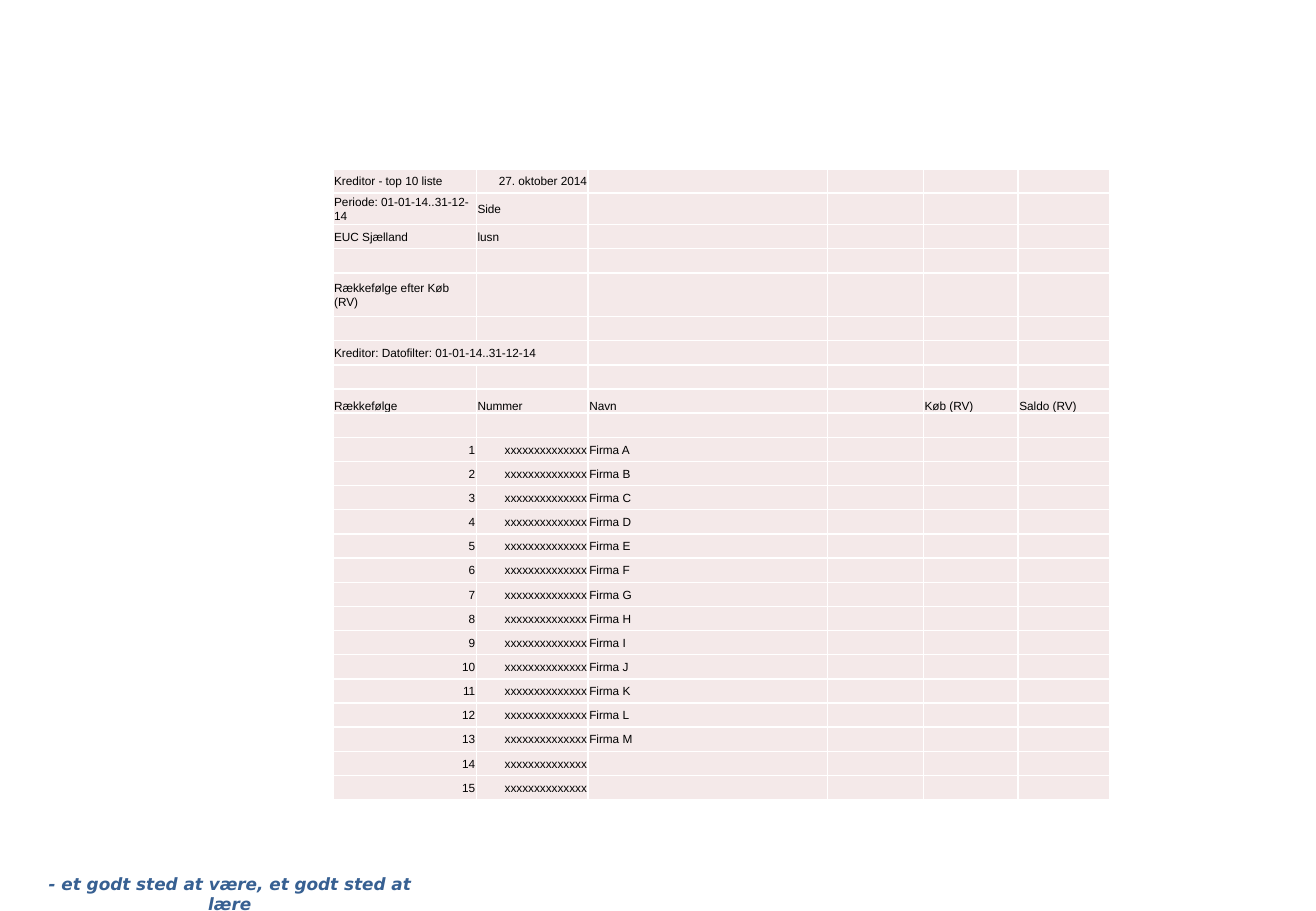
"""Build the creditor top 10 list slide."""
from lxml import etree
from pptx import Presentation
from pptx.dml.color import RGBColor
from pptx.enum.text import MSO_ANCHOR, PP_ALIGN
from pptx.oxml.ns import qn
from pptx.util import Inches, Pt

MIDDLE, BOTTOM = MSO_ANCHOR.MIDDLE, MSO_ANCHOR.BOTTOM
LEFT, CENTER, RIGHT = PP_ALIGN.LEFT, PP_ALIGN.CENTER, PP_ALIGN.RIGHT
BLANK_LAYOUT = 6
HEADING_ROW = 8
FIRST_RANK_ROW = 10
COLUMN_WIDTHS = [1.18, 0.92, 1.97, 0.79, 0.78, 0.75]
TABLE_HEIGHT = 5.2
TALL_ROWS = {1: 0.26, 4: 0.36}

COMPANIES = [f"Firma {letter}" for letter in "ABCDEFGHIJKLM"] + ["", ""]
ROWS = [
    ["Kreditor - top 10 liste", "27. oktober 2014"],
    ["Periode: 01-01-14..31-12-14", "Side"],
    ["EUC Sjælland", "lusn"],
    [],
    ["Rækkefølge efter Køb (RV)"],
    [],
    ["Kreditor: Datofilter: 01-01-14..31-12-14"],
    [],
    ["Rækkefølge", "Nummer", "Navn", "", "Køb (RV)", "Saldo (RV)"],
    [],
] + [[str(rank), "x" * 14, name] for rank, name in enumerate(COMPANIES, 1)]


def color(value):
    return RGBColor.from_string(value)


def add_span(para, text, size, font, fill):
    span = para.add_run()
    span.text = text
    span.font.size = Pt(size)
    span.font.name = font
    span.font.color.rgb = color(fill)
    return span


deck = Presentation()
deck.slide_width = Inches(10.83)
deck.slide_height = Inches(7.5)
page = deck.slides.add_slide(deck.slide_layouts[BLANK_LAYOUT])
page.background.fill.solid()
page.background.fill.fore_color.rgb = color("FFFFFF")

motto = page.shapes.add_textbox(Inches(0.1), Inches(7.13), Inches(3.58), Inches(0.28))
frame = motto.text_frame
frame.word_wrap = True
frame.margin_left = frame.margin_right = Inches(0.11)
frame.margin_top = frame.margin_bottom = Inches(0.06)
para = frame.paragraphs[0]
para.alignment = CENTER
span = add_span(para, "- et godt sted at være, et godt sted at lære", 10, "DejaVu Sans", "376092")
span.font.bold = True
span.font.italic = True

table = page.shapes.add_table(
    len(ROWS), len(COLUMN_WIDTHS), Inches(2.74), Inches(1.39),
    Inches(sum(COLUMN_WIDTHS)), Inches(TABLE_HEIGHT),
).table
table.first_row = False
table.horz_banding = False
for column, width in zip(table.columns, COLUMN_WIDTHS):
    column.width = Inches(width)

row_height = (TABLE_HEIGHT - sum(TALL_ROWS.values())) / (len(ROWS) - len(TALL_ROWS))
for row_index, texts in enumerate(ROWS):
    table.rows[row_index].height = Inches(TALL_ROWS.get(row_index, row_height))
    for column_index in range(len(COLUMN_WIDTHS)):
        cell = table.cell(row_index, column_index)
        cell.margin_left = cell.margin_right = cell.margin_top = Inches(0.01)
        cell.margin_bottom = 0
        cell.vertical_anchor = BOTTOM if row_index == HEADING_ROW else MIDDLE
        para = cell.text_frame.paragraphs[0]
        text = texts[column_index] if column_index < len(texts) else ""
        is_rank = row_index >= FIRST_RANK_ROW and column_index < 2
        is_date = (row_index, column_index) == (0, 1)
        para.alignment = RIGHT if is_rank or is_date else LEFT
        if text:
            add_span(para, text, 7, "Arial", "000000")
        else:
            etree.SubElement(para._p, qn("a:endParaRPr"), sz="700")
        properties = cell._tc.get_or_add_tcPr()
        for side in ("lnL", "lnR", "lnT", "lnB"):
            border = etree.SubElement(properties, qn(f"a:{side}"), w=str(Pt(1)))
            paint = etree.SubElement(border, qn("a:solidFill"))
            etree.SubElement(paint, qn("a:srgbClr"), val="FFFFFF")
        cell.fill.solid()
        cell.fill.fore_color.rgb = color("F4E9E9")

table.cell(6, 0).merge(table.cell(6, 1))

deck.save("out.pptx")
